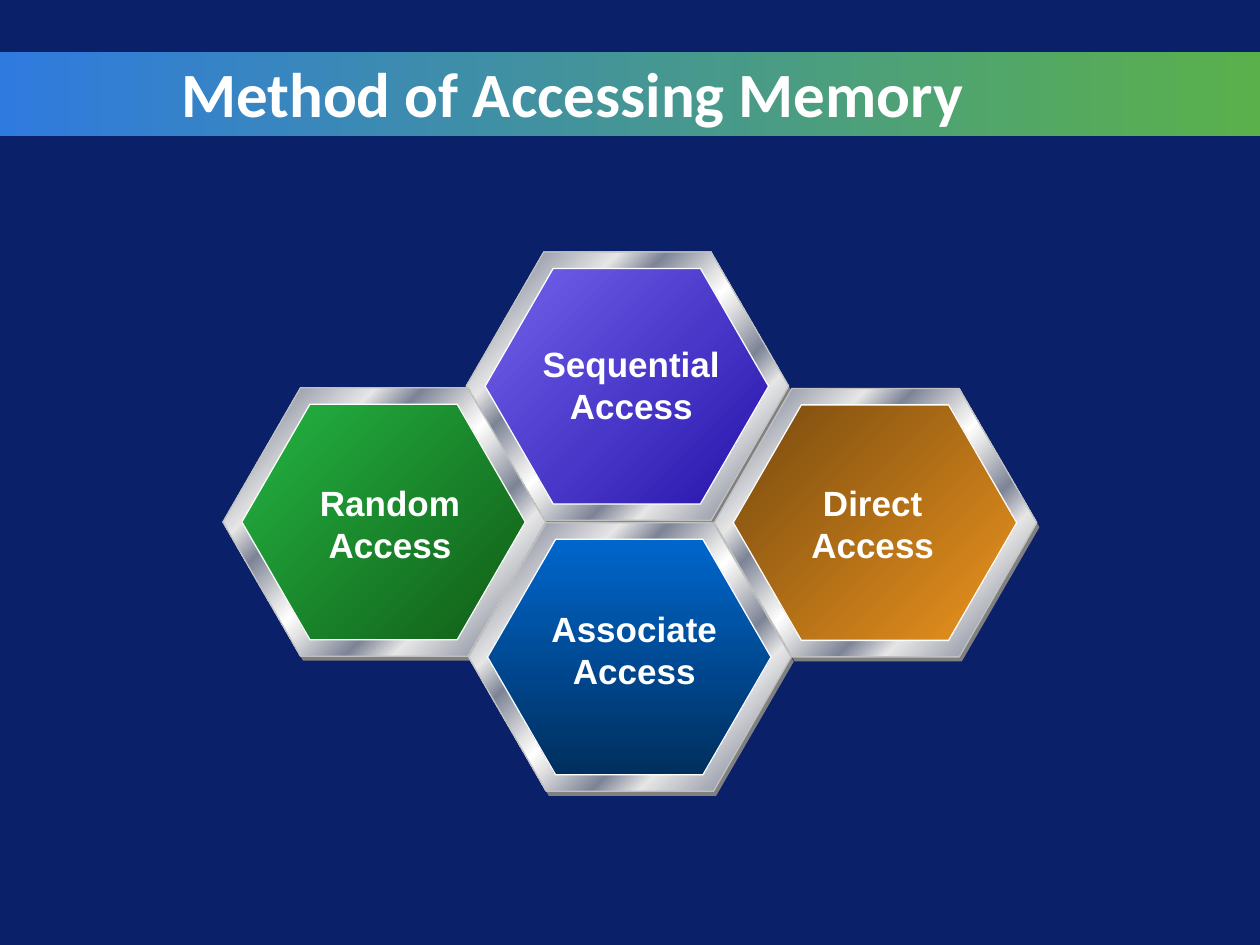
from dataclasses import dataclass

from lxml.etree import SubElement
from pptx import Presentation
from pptx.dml.color import RGBColor
from pptx.enum.shapes import MSO_SHAPE
from pptx.enum.text import MSO_ANCHOR, PP_ALIGN
from pptx.oxml.ns import qn
from pptx.util import Pt

WHITE = "FFFFFF"
STEEL = [(0, "E6E6E6"), (7, "7D8496"), (26, "E6E6E6"), (34, "7D8496"),
         (46, "E6E6E6"), (50, WHITE), (54, "E6E6E6"), (66, "7D8496"),
         (74, "E6E6E6"), (93, "7D8496"), (100, "E6E6E6")]
OUTER = (184.3, 153.4)
INNER = (162, 134.6)
LABEL_FONT = {"name": "Arial", "size": Pt(20), "bold": True}
TITLE_FONT = {"name": "Calibri", "size": Pt(36), "bold": True}


@dataclass
class Cell:
    """One framed hexagon with its label box, in points."""
    lines: tuple[str, str]
    left: float
    top: float
    start: str
    end: str
    angle: int
    text_left: float
    text_top: float
    text_width: float


CELLS = [
    Cell(("Sequential", "Access"), 266.4, 144, "7262EC", "2614AA", 45, 302.4, 192.2, 116.6),
    Cell(("Random", "Access"), 127.4, 221.6, "24B443", "115D16", 45, 175, 271.4, 95.8),
    Cell(("Direct", "Access"), 408.2, 222, "774A0F", "EC941E", 45, 455.8, 271.4, 85.7),
    Cell(("Associate", "Access"), 267.8, 298.8, "0066CC", "002F5E", 90, 307.4, 343.4, 110.2),
]


def color(value: str) -> RGBColor:
    """Turn a hex string into a colour."""
    return RGBColor.from_string(value)


def set_font(font, values: dict) -> None:
    """Apply format values and white colour to a font."""
    for name, value in values.items():
        setattr(font, name, value)
    font.color.rgb = color(WHITE)


def set_gradient(fill, stops: list, angle: int) -> None:
    """Fill with a linear gradient at a clockwise angle."""
    fill.gradient()
    fill.gradient_angle = -angle % 360
    gs_lst = fill._xPr.find(qn("a:gradFill")).find(qn("a:gsLst"))
    for gs in list(gs_lst):
        gs_lst.remove(gs)
    for pos, value in stops:
        gs = SubElement(gs_lst, qn("a:gs"), pos=str(pos * 1000))
        SubElement(gs, qn("a:srgbClr"), val=value)


def add_hexagon(shapes, left: float, top: float, size: tuple, line: str | None = None):
    """Add a regular hexagon with an optional thin outline."""
    sp = shapes.add_shape(MSO_SHAPE.HEXAGON, Pt(left), Pt(top), *map(Pt, size))
    sp.shadow.inherit = False
    sp.adjustments[0] = 0.289
    if line:
        sp.line.color.rgb = color(line)
        sp.line.width = Pt(0.75)
    else:
        sp.line.fill.background()
    return sp


def add_cell(slide, cell: Cell) -> None:
    """Draw shade, steel frame, coloured face and label as one group."""
    shapes = slide.shapes.add_group_shape().shapes
    shade = add_hexagon(shapes, cell.left + 1.5, cell.top + 2.6, OUTER)
    shade.fill.solid()
    shade.fill.fore_color.rgb = color("808080")
    frame = add_hexagon(shapes, cell.left, cell.top, OUTER, "C0C0C0")
    set_gradient(frame.fill, STEEL, 45)
    face = add_hexagon(shapes, cell.left + 10.8, cell.top + 9.4, INNER, WHITE)
    set_gradient(face.fill, [(0, cell.start), (100, cell.end)], cell.angle)
    box = shapes.add_textbox(Pt(cell.text_left), Pt(cell.text_top), Pt(cell.text_width), Pt(55.4))
    tf = box.text_frame
    tf.word_wrap = True
    tf.text = "\n".join(cell.lines)
    for p in tf.paragraphs:
        p.alignment = PP_ALIGN.CENTER
        p.line_spacing = Pt(24)
        set_font(p.runs[0].font, LABEL_FONT)


def add_title(slide) -> None:
    """Place the gradient band and the title over it."""
    band = slide.shapes.add_shape(MSO_SHAPE.RECTANGLE, 0, Pt(30), Pt(720), Pt(48))
    band.shadow.inherit = False
    band.line.fill.background()
    set_gradient(band.fill, [(0, "2F7ADF"), (100, "5AB14B")], 0)
    title = slide.shapes.title
    band._element.addnext(title._element)
    title.left, title.top, title.width, title.height = map(Pt, (36, 30, 522, 45))
    tf = title.text_frame
    tf.text = "Method of Accessing Memory"
    tf.vertical_anchor = MSO_ANCHOR.MIDDLE
    p = tf.paragraphs[0]
    p.alignment = PP_ALIGN.RIGHT
    set_font(p.runs[0].font, TITLE_FONT)


def main() -> None:
    """Build and save the slide."""
    prs = Presentation()
    prs.slide_width, prs.slide_height = Pt(720), Pt(540)
    slide = prs.slides.add_slide(prs.slide_layouts[5])
    slide.background.fill.solid()
    slide.background.fill.fore_color.rgb = color("0A2068")
    add_title(slide)
    for cell in CELLS:
        add_cell(slide, cell)
    prs.save("out.pptx")


if __name__ == "__main__":
    main()
